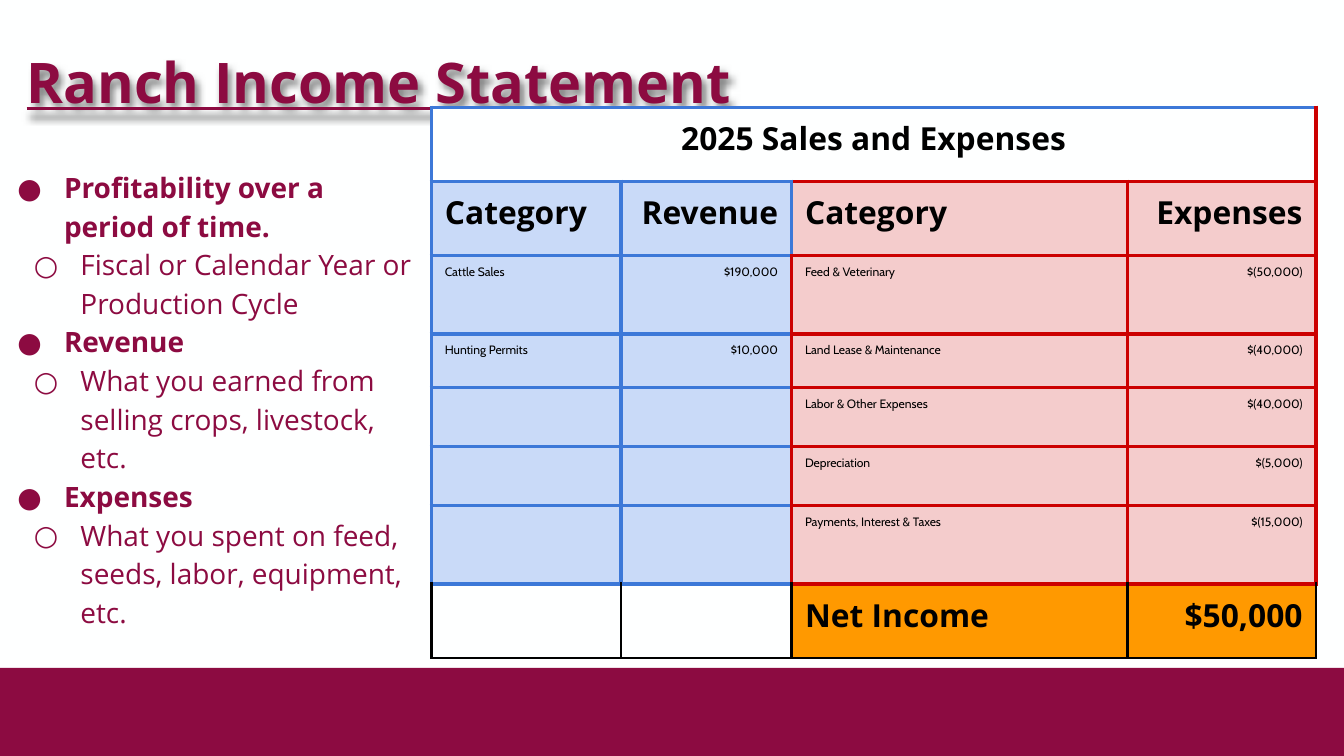
from dataclasses import dataclass

from lxml.etree import SubElement
from pptx import Presentation
from pptx.dml.color import RGBColor
from pptx.enum.shapes import MSO_SHAPE as Shape
from pptx.enum.text import MSO_ANCHOR as Anchor, PP_ALIGN as Align
from pptx.oxml.ns import qn
from pptx.util import Pt


@dataclass(frozen=True)
class Theme:
    paper: str = "FEFFFF"
    maroon: str = "8C0B41"
    black: str = "000000"
    blue: str = "3C78D8"
    pale_blue: str = "C9DAF8"
    red: str = "CC0000"
    pale_red: str = "F4CCCC"
    orange: str = "FF9900"
    head_font: str = "Open Sans"
    cell_font: str = "Cabin"
    title_size: float = 30
    body_size: float = 15
    head_size: float = 17
    cell_size: float = 6.5
    thick: float = 2.25
    thin: float = 1.5


THEME = Theme()
COLUMNS = [101.5, 91.5, 180, 101]
ROWS = [39.6, 39.6, 42, 28.8, 31, 31, 42, 39.6]
STATEMENT = [
    ["Category", "Revenue", "Category", "Expenses"],
    ["Cattle Sales", "$190,000", "Feed & Veterinary", "$(50,000)"],
    ["Hunting Permits", "$10,000", "Land Lease & Maintenance", "$(40,000)"],
    ["", "", "Labor & Other Expenses", "$(40,000)"],
    ["", "", "Depreciation", "$(5,000)"],
    ["", "", "Payments, Interest & Taxes", "$(15,000)"],
    ["", "", "Net Income", "$50,000"],
]
POINTS = [
    ("Profitability over a period of time.", "Fiscal or Calendar Year or Production Cycle"),
    ("Revenue", "What you earned from selling crops, livestock, etc."),
    ("Expenses", "What you spent on feed, seeds, labor, equipment, etc."),
]


def rgb(code):
    return RGBColor.from_string(code)


def write(para, text, *, size, color=THEME.maroon, font=THEME.head_font,
          bold=False, underline=None, align=Align.LEFT, spacing=None):
    para.alignment = align
    if spacing:
        para.line_spacing = spacing
    span = para.add_run()
    span.text = text
    span.font.name = font
    span.font.size = Pt(size)
    span.font.bold = bold
    span.font.underline = underline
    span.font.color.rgb = rgb(color)


def add_frame(page, box, margin_y, anchor):
    """Add a wrapping text box and return it with its text frame."""
    holder = page.shapes.add_textbox(*map(Pt, box))
    frame = holder.text_frame
    frame.word_wrap = True
    frame.vertical_anchor = anchor
    frame.margin_left = frame.margin_right = Pt(7.2)
    frame.margin_top = frame.margin_bottom = Pt(margin_y)
    return holder, frame


def add_soft_shadow(shape):
    effects = SubElement(shape.element.spPr, qn("a:effectLst"))
    shadow = SubElement(effects, qn("a:outerShdw"), blurRad=str(Pt(4)),
                        dist=str(Pt(3)), dir="3600000", algn="bl", rotWithShape="0")
    color = SubElement(shadow, qn("a:srgbClr"), val=THEME.black)
    SubElement(color, qn("a:alpha"), val="50000")


def add_title(page, box):
    holder, frame = add_frame(page, box, 7.2, Anchor.TOP)
    para = frame.paragraphs[0]
    para._p.get_or_add_pPr().set("marL", str(Pt(7.2)))
    write(para, "Ranch Income Statement", size=THEME.title_size,
          bold=True, underline=True, spacing=1.5)
    add_soft_shadow(holder)


def set_bullet(para, mark, indent):
    props = para._p.get_or_add_pPr()
    props.set("marL", str(Pt(indent)))
    props.set("indent", str(Pt(-25)))
    color = SubElement(props, qn("a:buClr"))
    SubElement(color, qn("a:srgbClr"), val=THEME.maroon)
    SubElement(props, qn("a:buFont"), typeface=THEME.head_font)
    SubElement(props, qn("a:buChar"), char=mark)


def add_points(page, box):
    _, frame = add_frame(page, box, 3.6, Anchor.MIDDLE)
    lines = [(text, level) for pair in POINTS for level, text in enumerate(pair)]
    for index, (text, level) in enumerate(lines):
        para = frame.add_paragraph() if index else frame.paragraphs[0]
        para.level = level
        set_bullet(para, "●○"[level], (27.2, 36)[level])
        write(para, text, size=THEME.body_size, bold=level == 0, spacing=1.15)


def style_cell(cell, fill, borders):
    """Borders map each side, L, R, T and B, to a colour and a width."""
    cell.margin_left = cell.margin_right = Pt(7.2)
    cell.margin_top = cell.margin_bottom = Pt(5)
    props = cell._tc.get_or_add_tcPr()
    for side in "LRTB":
        color, width = borders[side]
        line = SubElement(props, qn(f"a:ln{side}"), w=str(Pt(width)))
        paint = SubElement(line, qn("a:solidFill"))
        SubElement(paint, qn("a:srgbClr"), val=color)
    if fill:
        cell.fill.solid()
        cell.fill.fore_color.rgb = rgb(fill)
    else:
        cell.fill.background()


def cell_look(row, column):
    """Return the fill and borders of a cell below the table heading."""
    blue, red = (THEME.blue, THEME.thick), (THEME.red, THEME.thick)
    is_expense = column > 1
    main = red if is_expense else blue
    if row == len(ROWS) - 1:
        borders = dict.fromkeys("LRB", (THEME.black, THEME.thin)) | {"T": main}
        return (THEME.orange if is_expense else None), borders
    borders = dict.fromkeys("LRTB", main)
    if row == 1 and column == 2:
        borders["L"] = blue
    elif row > 1 and column == 1:
        borders["R"] = red
    return (THEME.pale_red if is_expense else THEME.pale_blue), borders


def add_statement(page, box):
    table = page.shapes.add_table(len(ROWS), len(COLUMNS), *map(Pt, box)).table
    table.first_row = table.horz_banding = False
    for column, width in zip(table.columns, COLUMNS):
        column.width = Pt(width)
    for row, height in zip(table.rows, ROWS):
        row.height = Pt(height)

    heading = table.cell(0, 0)
    heading.merge(table.cell(0, len(COLUMNS) - 1))
    blue = (THEME.blue, THEME.thick)
    style_cell(heading, THEME.paper,
               dict.fromkeys("LTB", blue) | {"R": (THEME.red, THEME.thick)})
    write(heading.text_frame.paragraphs[0], "2025 Sales and Expenses",
          size=THEME.head_size, color=THEME.black, bold=True, align=Align.CENTER)

    for row, values in enumerate(STATEMENT, 1):
        is_head = row in (1, len(STATEMENT))
        for column, text in enumerate(values):
            cell = table.cell(row, column)
            style_cell(cell, *cell_look(row, column))
            write(cell.text_frame.paragraphs[0], text, color=THEME.black, bold=is_head,
                  size=THEME.head_size if is_head else THEME.cell_size,
                  font=THEME.head_font if is_head else THEME.cell_font,
                  align=Align.RIGHT if column % 2 else Align.LEFT)


def add_footer_band(page, box):
    band = page.shapes.add_shape(Shape.RECTANGLE, *map(Pt, box))
    band.shadow.inherit = False
    band.fill.solid()
    band.fill.fore_color.rgb = rgb(THEME.maroon)
    band.line.fill.background()


def main():
    deck = Presentation()
    deck.slide_width, deck.slide_height = Pt(720), Pt(405)
    page = deck.slides.add_slide(deck.slide_layouts[6])
    page.background.fill.solid()
    page.background.fill.fore_color.rgb = rgb(THEME.paper)
    add_footer_band(page, (0, 357.8, 720, 47.2))
    add_title(page, (0, 0, 720, 54))
    add_statement(page, (231.1, 57.6, sum(COLUMNS), sum(ROWS)))
    add_points(page, (0, 54, 231.1, 317.5))
    deck.save("out.pptx")


if __name__ == "__main__":
    main()
